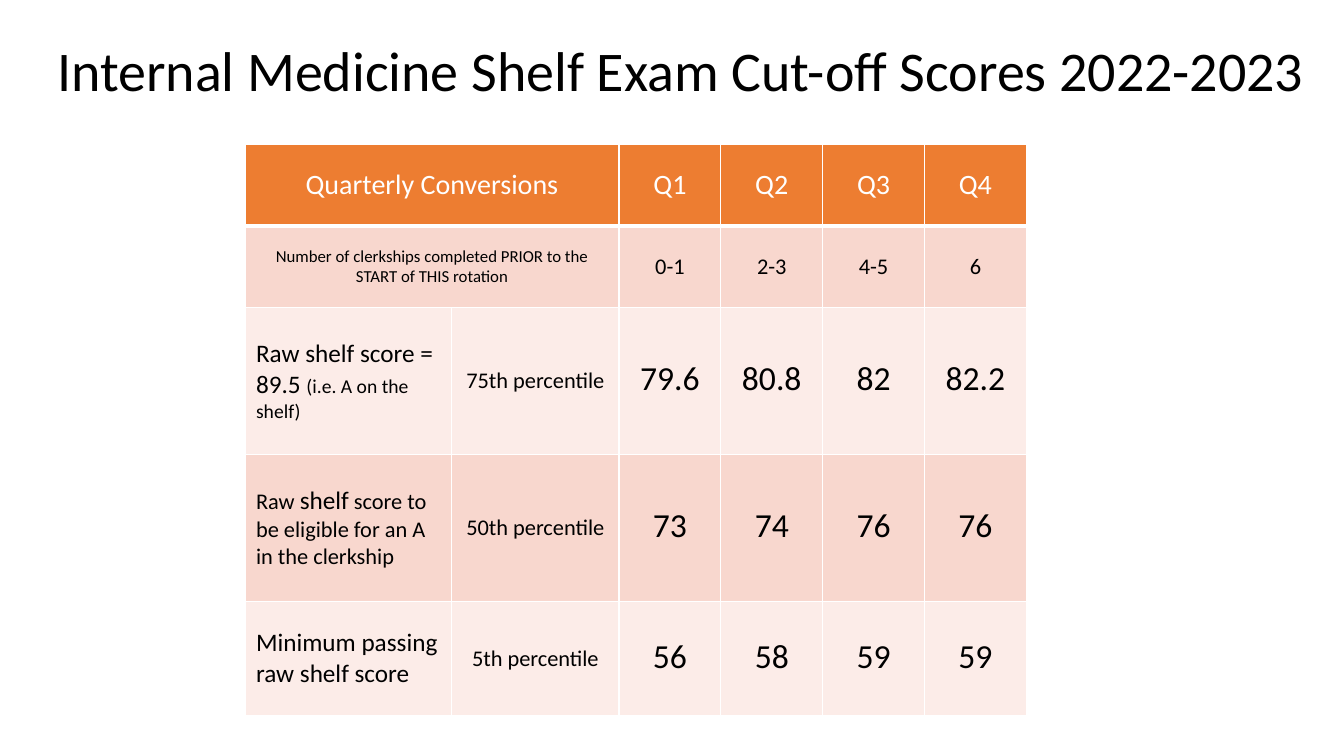
from lxml.etree import SubElement
from pptx import Presentation
from pptx.dml.color import RGBColor
from pptx.enum.text import MSO_ANCHOR as Anchor, PP_ALIGN as Align
from pptx.oxml.ns import qn
from pptx.util import Pt

PX = 9144  # 100 px to the inch
FONT = "Calibri"
COLORS = {
    "black": "000000",
    "white": "FFFFFF",
    "header": "ED7D31",
    "dark_band": "F8D7CE",
    "light_band": "FCECE8",
}
COLUMN_WIDTHS = [205, 166] + [101] * 4
ROW_HEIGHTS = [81, 81, 146, 146, 113]
TEXT_MARGINS = (11, 6, 11, 6)
SCORE_MARGINS = (1, 1, 1, 5)

# Spanning label, its size, quarter values, their size
HEADING_ROWS = [
    ("Quarterly Conversions", 20, ["Q1", "Q2", "Q3", "Q4"], 20),
    ("Number of clerkships completed PRIOR to the START of THIS rotation", 12,
     ["0-1", "2-3", "4-5", "6"], 16),
]
# Label runs, percentile, quarter scores
SCORE_ROWS = [
    ([("Raw shelf score = 89.5 ", 18), ("(i.e. A on the shelf)", 14)],
     "75th percentile", ["79.6", "80.8", "82", "82.2"]),
    ([("Raw ", 16), ("shelf", 18),
      (" score to be eligible for an A in the clerkship", 16)],
     "50th percentile", ["73", "74", "76", "76"]),
    ([("Minimum passing raw shelf score", 18)],
     "5th percentile", ["56", "58", "59", "59"]),
]


def color(name):
    return RGBColor.from_string(COLORS[name])


def set_margins(target, margins):
    sides = ("left", "top", "right", "bottom")
    for side, margin in zip(sides, margins):
        setattr(target, f"margin_{side}", margin * PX)


def write_runs(paragraph, runs, color_name, align):
    paragraph.alignment = align
    paragraph.font.name = FONT
    paragraph.font.color.rgb = color(color_name)
    if len(runs) == 1:
        paragraph.font.size = Pt(runs[0][1])
    for text, size in runs:
        run = paragraph.add_run()
        run.text = text
        if len(runs) > 1:
            run.font.size = Pt(size)


def add_borders(cell, bottom_width):
    properties = cell._tc.get_or_add_tcPr()
    widths = {"lnL": 1, "lnR": 1, "lnT": 1, "lnB": bottom_width}
    for tag, width in widths.items():
        line = SubElement(properties, qn(f"a:{tag}"), w=str(Pt(width)))
        fill = SubElement(line, qn("a:solidFill"))
        SubElement(fill, qn("a:srgbClr"), val=COLORS["white"])


def fill_cell(table, row, column, runs, align=Align.CENTER, margins=TEXT_MARGINS):
    cell = table.cell(row, column)
    write_runs(cell.text_frame.paragraphs[0], runs,
               "black" if row else "white", align)
    cell.vertical_anchor = Anchor.MIDDLE
    set_margins(cell, margins)


def style_cells(table):
    for row, table_row in enumerate(table.rows):
        band = "dark_band" if row % 2 else "light_band"
        for cell in table_row.cells:
            add_borders(cell, 1 if row else 3)
            cell.fill.solid()
            cell.fill.fore_color.rgb = color(band if row else "header")


def add_title(slide, left, top, width, height):
    shape = slide.shapes.add_textbox(left * PX, top * PX, width * PX, height * PX)
    frame = shape.text_frame
    frame.word_wrap = True
    frame.vertical_anchor = Anchor.MIDDLE
    set_margins(frame, (10, 5, 10, 5))
    paragraph = frame.paragraphs[0]
    paragraph.line_spacing = 0.9
    write_runs(paragraph,
               [("Internal Medicine Shelf Exam Cut-off Scores 2022-2023", 40)],
               "black", Align.LEFT)


def add_score_table(slide, left, top):
    table = slide.shapes.add_table(
        len(ROW_HEIGHTS), len(COLUMN_WIDTHS), left * PX, top * PX,
        sum(COLUMN_WIDTHS) * PX, sum(ROW_HEIGHTS) * PX).table
    table.first_row = False
    table.horz_banding = False
    for column, width in zip(table.columns, COLUMN_WIDTHS):
        column.width = width * PX
    for table_row, height in zip(table.rows, ROW_HEIGHTS):
        table_row.height = height * PX
    style_cells(table)

    # Heading rows, with the label across two columns
    for row, (label, label_size, values, size) in enumerate(HEADING_ROWS):
        table.cell(row, 0).merge(table.cell(row, 1))
        fill_cell(table, row, 0, [(label, label_size)])
        for column, value in enumerate(values, 2):
            fill_cell(table, row, column, [(value, size)])

    # Score rows
    for row, (label, percentile, scores) in enumerate(SCORE_ROWS, len(HEADING_ROWS)):
        fill_cell(table, row, 0, label, Align.LEFT)
        fill_cell(table, row, 1, [(percentile, 16)])
        for column, score in enumerate(scores, 2):
            fill_cell(table, row, column, [(score, 24)], margins=SCORE_MARGINS)


def main():
    presentation = Presentation()
    presentation.slide_width = 1333 * PX
    presentation.slide_height = 750 * PX
    slide = presentation.slides.add_slide(presentation.slide_layouts[6])
    add_title(slide, 47, 0, 1256, 145)
    add_score_table(slide, 243, 143)
    presentation.save("out.pptx")


if __name__ == "__main__":
    main()
